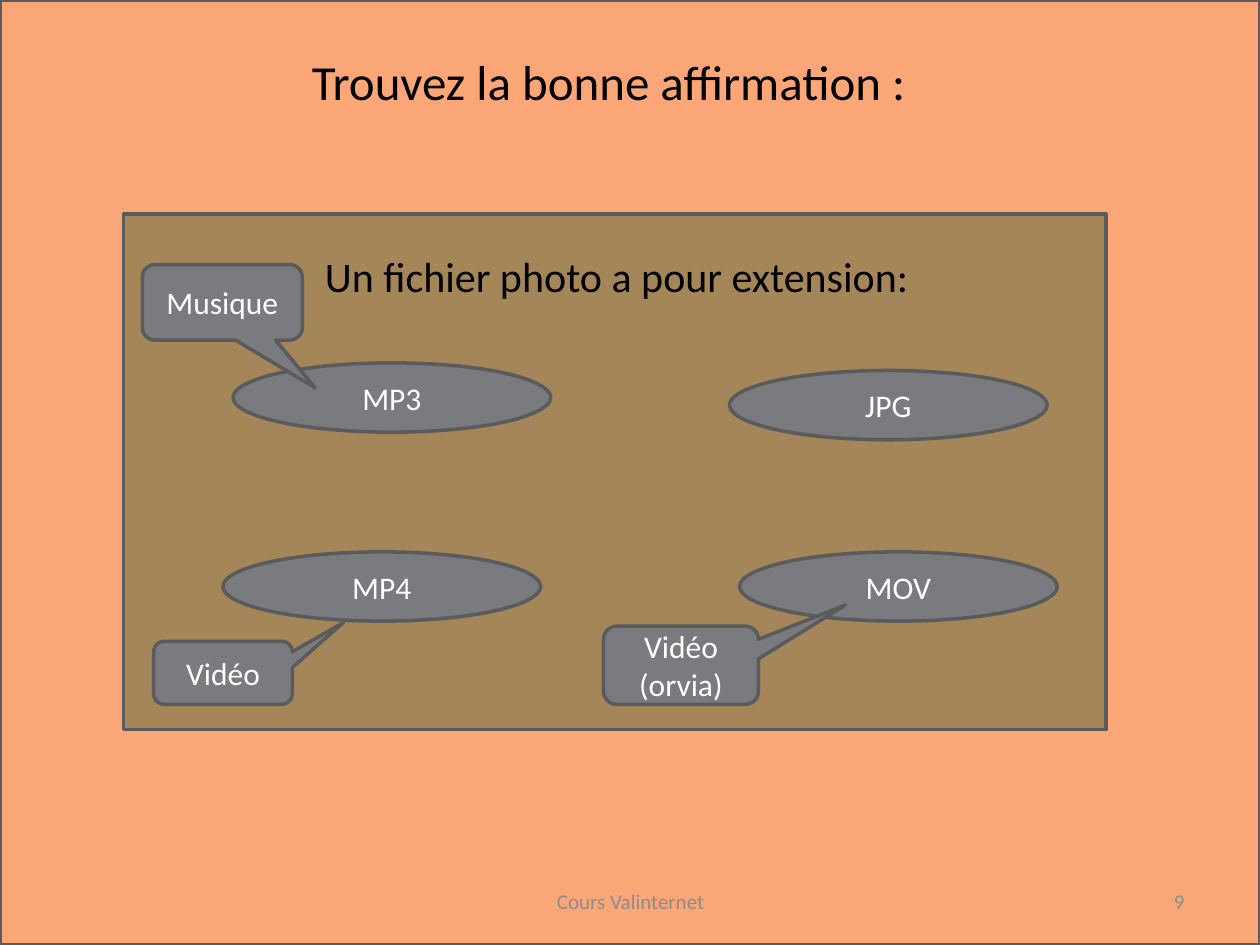
"""Build a quiz slide about file extensions."""
from dataclasses import dataclass

from pptx import Presentation
from pptx.dml.color import RGBColor
from pptx.enum.shapes import MSO_SHAPE
from pptx.enum.text import MSO_ANCHOR, PP_ALIGN
from pptx.util import Inches, Pt


@dataclass(frozen=True)
class Theme:
    font: str = "Calibri"
    background: str = "FBA676"
    panel: str = "A48658"
    bubble: str = "797B7E"
    outline: str = "5A5B5D"
    dark: str = "000000"
    light: str = "FFFFFF"
    muted: str = "8C8C8C"
    title: int = 28
    question: int = 24
    label: int = 18
    footer: int = 12
    border: int = 2


class QuizPage:
    def __init__(self, page, theme):
        self.page = page
        self.theme = theme

    def add_span(self, box, text, size, color, align, anchor):
        frame = box.text_frame
        frame.vertical_anchor = anchor
        para = frame.paragraphs[0]
        para.alignment = align
        span = para.add_run()
        span.text = text
        span.font.name = self.theme.font
        span.font.size = Pt(size)
        span.font.color.rgb = RGBColor.from_string(color)

    def shape(self, kind, area, fill):
        shape = self.page.shapes.add_shape(kind, *map(Inches, area))
        shape.shadow.inherit = False
        shape.fill.solid()
        shape.fill.fore_color.rgb = RGBColor.from_string(fill)
        shape.line.color.rgb = RGBColor.from_string(self.theme.outline)
        shape.line.width = Pt(self.theme.border)
        return shape

    def panel(self, area, fill):
        self.shape(MSO_SHAPE.RECTANGLE, area, fill)

    def bubble(self, kind, area, text):
        shape = self.shape(kind, area, self.theme.bubble)
        shape.text_frame.word_wrap = True
        self.add_span(shape, text, self.theme.label, self.theme.light,
                      PP_ALIGN.CENTER, MSO_ANCHOR.MIDDLE)
        return shape

    def answer(self, left, top, text):
        self.bubble(MSO_SHAPE.OVAL, (left, top, 2.52, 0.55), text)

    def callout(self, area, tip, text):
        shape = self.bubble(MSO_SHAPE.ROUNDED_RECTANGULAR_CALLOUT, area, text)
        shape.adjustments[0], shape.adjustments[1] = tip

    def text(self, area, text, size, color, align=PP_ALIGN.CENTER,
             anchor=MSO_ANCHOR.TOP, wrap=True):
        box = self.page.shapes.add_textbox(*map(Inches, area))
        box.text_frame.word_wrap = wrap
        self.add_span(box, text, size, color, align, anchor)


def main():
    theme = Theme()
    deck = Presentation()
    deck.slide_width, deck.slide_height = Inches(10), Inches(7.5)
    quiz = QuizPage(deck.slides.add_slide(deck.slide_layouts[6]), theme)

    quiz.panel((0, 0, 10, 7.5), theme.background)
    quiz.panel((0.98, 1.7, 7.8, 4.09), theme.panel)
    quiz.text((2.48, 1.94, 4.88, 0.5), "Un fichier photo a pour extension:",
              theme.question, theme.dark, PP_ALIGN.LEFT, wrap=False)

    for left, top, extension in (
        (1.85, 2.88, "MP3"),
        (1.77, 4.38, "MP4"),
        (5.87, 4.38, "MOV"),
        (5.79, 2.94, "JPG"),
    ):
        quiz.answer(left, top, extension)

    quiz.text((1.13, 0.36, 7.4, 0.57), "Trouvez la bonne affirmation :",
              theme.title, theme.dark)

    for area, tip, hint in (
        ((1.13, 2.1, 1.27, 0.6), (0.58, 1.13), "Musique"),
        ((4.79, 4.97, 1.23, 0.62), (1.06, -0.77), "Vidéo (orvia)"),
        ((1.22, 5.09, 1.1, 0.5), (0.87, -0.8), "Vidéo"),
    ):
        quiz.callout(area, tip, hint)

    for left, width, note, align in (
        (3.42, 3.17, "Cours Valinternet", PP_ALIGN.CENTER),
        (7.17, 2.33, "9", PP_ALIGN.RIGHT),
    ):
        quiz.text((left, 6.95, width, 0.4), note, theme.footer, theme.muted,
                  align, MSO_ANCHOR.MIDDLE)

    deck.save("out.pptx")


if __name__ == "__main__":
    main()
